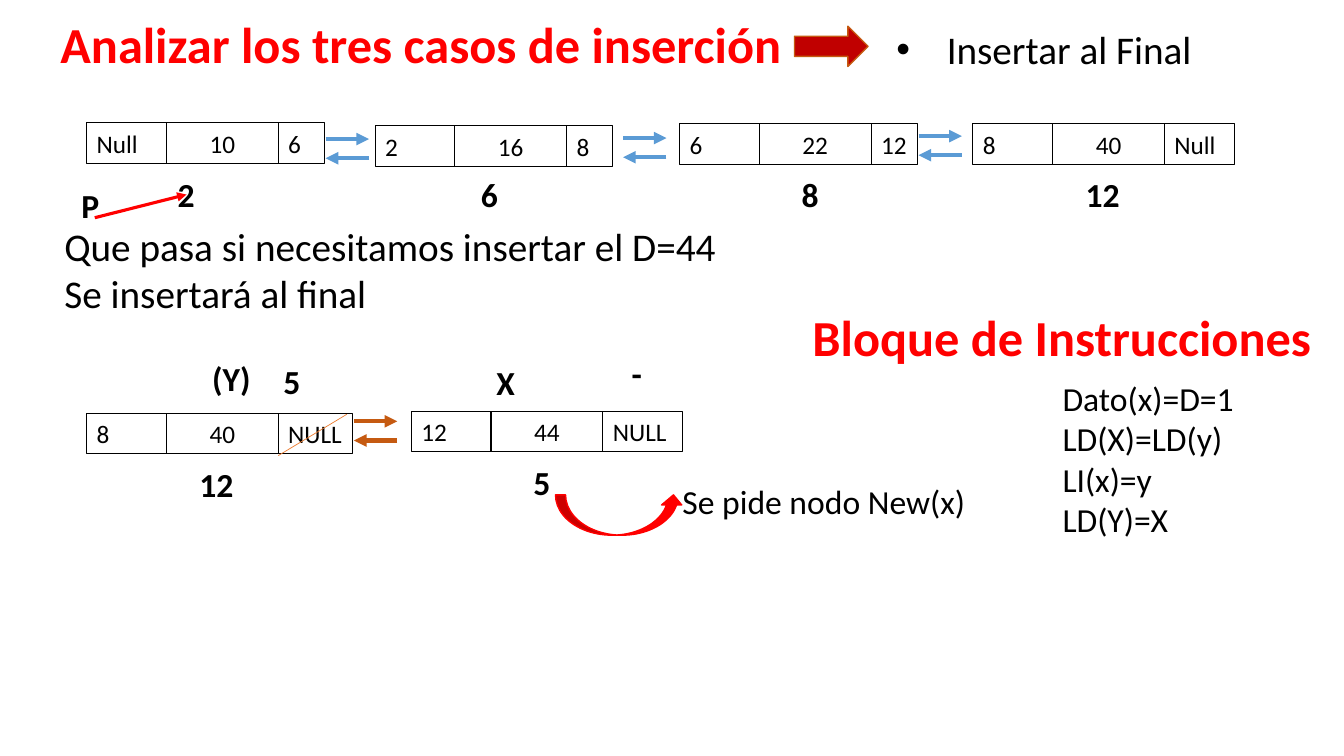
from pptx import Presentation
from pptx.dml.color import RGBColor
from pptx.enum.shapes import MSO_CONNECTOR as Connector, MSO_SHAPE as Shape
from pptx.enum.text import MSO_ANCHOR as Anchor, MSO_AUTO_SIZE as AutoSize, PP_ALIGN as Align
from pptx.oxml.ns import qn
from pptx.util import Inches, Pt
from lxml.etree import SubElement

COLORS = {"ink": "000000", "red": "FF0000", "dark_red": "C00000",
          "blue": "5B9BD5", "brown": "C55A11", "orange": "ED7D31"}
FONT = "Calibri"
TITLE = "Analizar los tres casos de inserción"
CASE = "Insertar al Final"

LEFT_WIDTH, DATA_WIDTH, ROW_HEIGHT = 0.79, 1.11, 0.4
NODES = [
    (0.86, 1.22, 0.46, ("Null", "10", "6")),
    (3.72, 1.25, 0.46, ("2", "16", "8")),
    (6.74, 1.23, 0.46, ("6", "22", "12")),
    (9.65, 1.23, 0.69, ("8", "40", "Null")),
    (0.86, 4.1, 0.74, ("8", "40", "NULL")),
    (4.08, 4.08, 0.79, ("12", "44", "NULL")),
]
LABEL_WIDTH, LABEL_HEIGHT = 0.71, 0.5
LABELS = [
    ("2", 1.49, 1.68), ("6", 4.5, 1.68), ("8", 7.68, 1.68), ("12", 10.58, 1.68),
    ("P", 0.54, 1.79), ("(Y)", 1.94, 3.5), ("5", 2.54, 3.53), ("X", 4.66, 3.54),
    ("-", 5.96, 3.45), ("12", 1.79, 4.55), ("5", 5.02, 4.53),
]
LINK_LENGTH, LINK_GAP = 0.43, 0.19
LINKS = [(3.23, 1.38, "blue"), (6.18, 1.37, "blue"), (9.11, 1.35, "blue"), (3.51, 4.18, "brown")]
NOTES = [
    (("Que pasa si necesitamos insertar el D=44", "Se insertará al final"),
     (0.54, 2.16, 12.24, 1.04), 28, "ink", False),
    (("Se pide nodo New(x)",), (6.67, 4.72, 3.68, 0.5), 24, "ink", False),
    (("Dato(x)=D=1", "LD(X)=LD(y)", "LI(x)=y", "LD(Y)=X"),
     (10.44, 3.7, 2, 1.72), 24, "ink", False),
    (("Bloque de Instrucciones",), (7.96, 2.99, 5.32, 0.71), 36, "red", True),
]
BLOCK_ARROWS = [
    (Shape.CURVED_UP_ARROW, (5.51, 4.91, 1.27, 0.4), "red", "red"),
    (Shape.RIGHT_ARROW, (7.88, 0.26, 0.73, 0.4), "dark_red", "brown"),
]


def color(name):
    return RGBColor.from_string(COLORS[name])


def place(box, area):
    box.left, box.top, box.width, box.height = map(Inches, area)


def write(box, lines, size, tone="ink", bold=False, align=Align.LEFT):
    frame = box.text_frame
    frame.word_wrap = True
    frame.auto_size = AutoSize.NONE
    frame.vertical_anchor = Anchor.TOP
    for index, line in enumerate(lines):
        para = frame.add_paragraph() if index else frame.paragraphs[0]
        para.alignment = align
        para.space_before = Pt(0)
        span = para.add_run()
        span.text = line
        span.font.name = FONT
        span.font.size = Pt(size)
        span.font.bold = bold
        span.font.color.rgb = color(tone)


def add_text(page, area, *style):
    box = page.shapes.add_textbox(*map(Inches, area))
    write(box, *style)
    return box


def add_node(page, left, top, right_width, values):
    for value, width, align in zip(values, (LEFT_WIDTH, DATA_WIDTH, right_width),
                                   (Align.LEFT, Align.CENTER, Align.LEFT)):
        cell = add_text(page, (left, top, width, ROW_HEIGHT), (value,), 18, "ink", False, align)
        if align == Align.LEFT:
            cell.text_frame.margin_right = 0
        cell.line.color.rgb = color("ink")
        cell.line.width = Pt(0.75)
        left += width


def add_line(page, start, end, tone, weight, arrow=True):
    line = page.shapes.add_connector(Connector.STRAIGHT, *map(Inches, start + end))
    line.line.color.rgb = color(tone)
    line.line.width = Pt(weight)
    properties = line._element.spPr
    if arrow:
        SubElement(properties.find(qn("a:ln")), qn("a:tailEnd"), type="triangle")
    SubElement(properties, qn("a:effectLst"))


def add_link(page, left, top, tone):
    right, bottom = left + LINK_LENGTH, top + LINK_GAP
    add_line(page, (left, top), (right, top), tone, 3)
    add_line(page, (right, bottom), (left, bottom), tone, 3)


def fill_placeholders(page):
    title, case = page.placeholders
    place(title, (0.5, 0.08, 7.46, 0.71))
    write(title, (TITLE,), 36, "red", True)
    place(case, (8.79, 0.2, 4.4, 0.57))
    write(case, (CASE,), 28)
    bullet = case.text_frame.paragraphs[0]._p.get_or_add_pPr()
    bullet.set("marL", str(Inches(0.5)))
    bullet.set("indent", str(-Inches(0.5)))
    SubElement(bullet, qn("a:buFont"), typeface="Arial")
    SubElement(bullet, qn("a:buChar"), char="•")


def main():
    deck = Presentation()
    deck.slide_width, deck.slide_height = Inches(13.33), Inches(7.5)
    page = deck.slides.add_slide(deck.slide_layouts[1])
    fill_placeholders(page)
    for note in NOTES:
        add_text(page, note[1], note[0], *note[2:])
    for node in NODES:
        add_node(page, *node)
    for text, left, top in LABELS:
        add_text(page, (left, top, LABEL_WIDTH, LABEL_HEIGHT), (text,), 24, "ink", True, Align.CENTER)
    for link in LINKS:
        add_link(page, *link)
    for kind, area, fill, outline in BLOCK_ARROWS:
        arrow = page.shapes.add_shape(kind, *map(Inches, area))
        arrow.shadow.inherit = False
        arrow.fill.solid()
        arrow.fill.fore_color.rgb = color(fill)
        arrow.line.color.rgb = color(outline)
        arrow.line.width = Pt(1)
    add_line(page, (0.94, 2.16), (1.85, 1.93), "red", 2.25)
    add_line(page, (3.44, 4.11), (2.76, 4.52), "orange", 0.5, arrow=False)
    deck.save("out.pptx")


if __name__ == "__main__":
    main()
